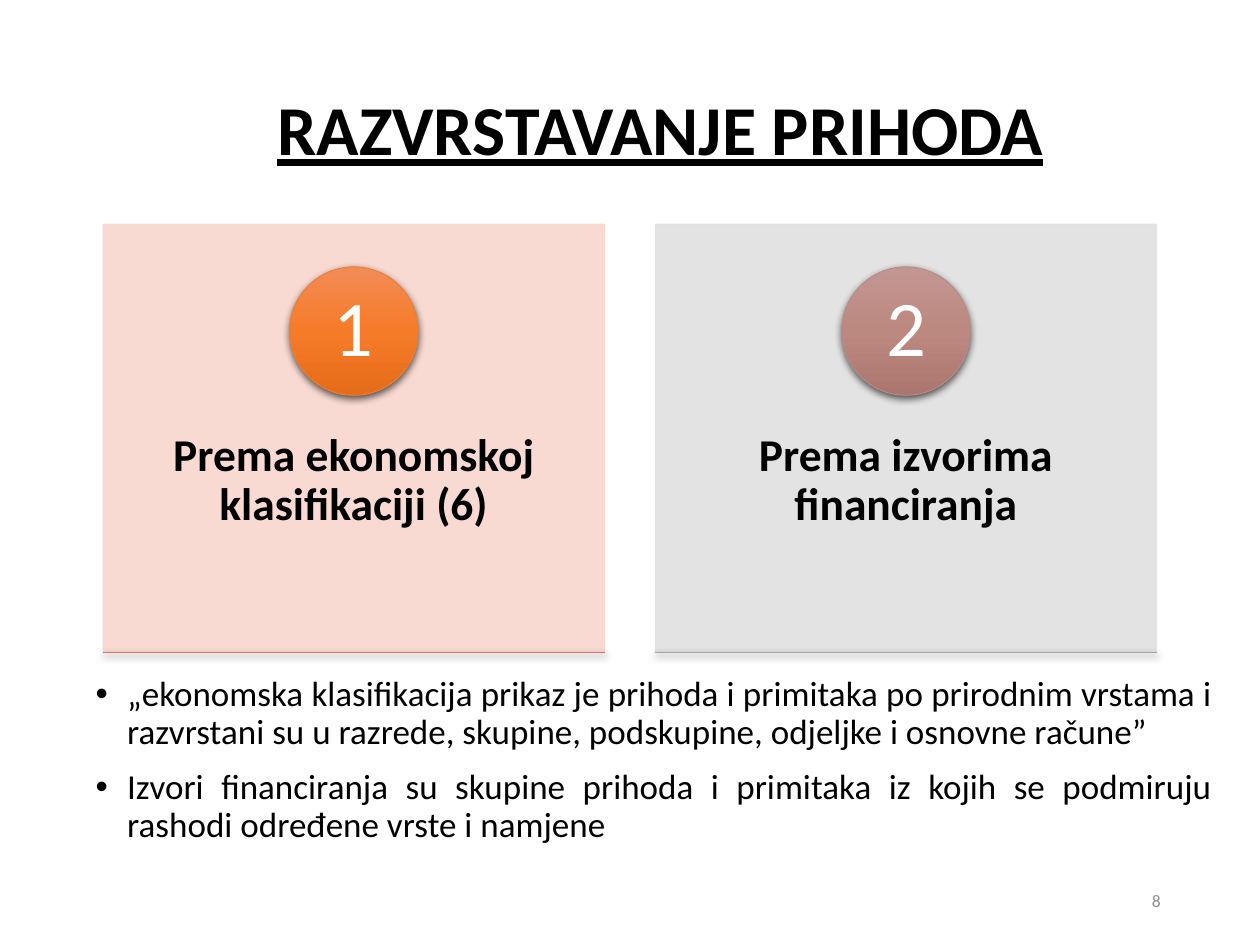
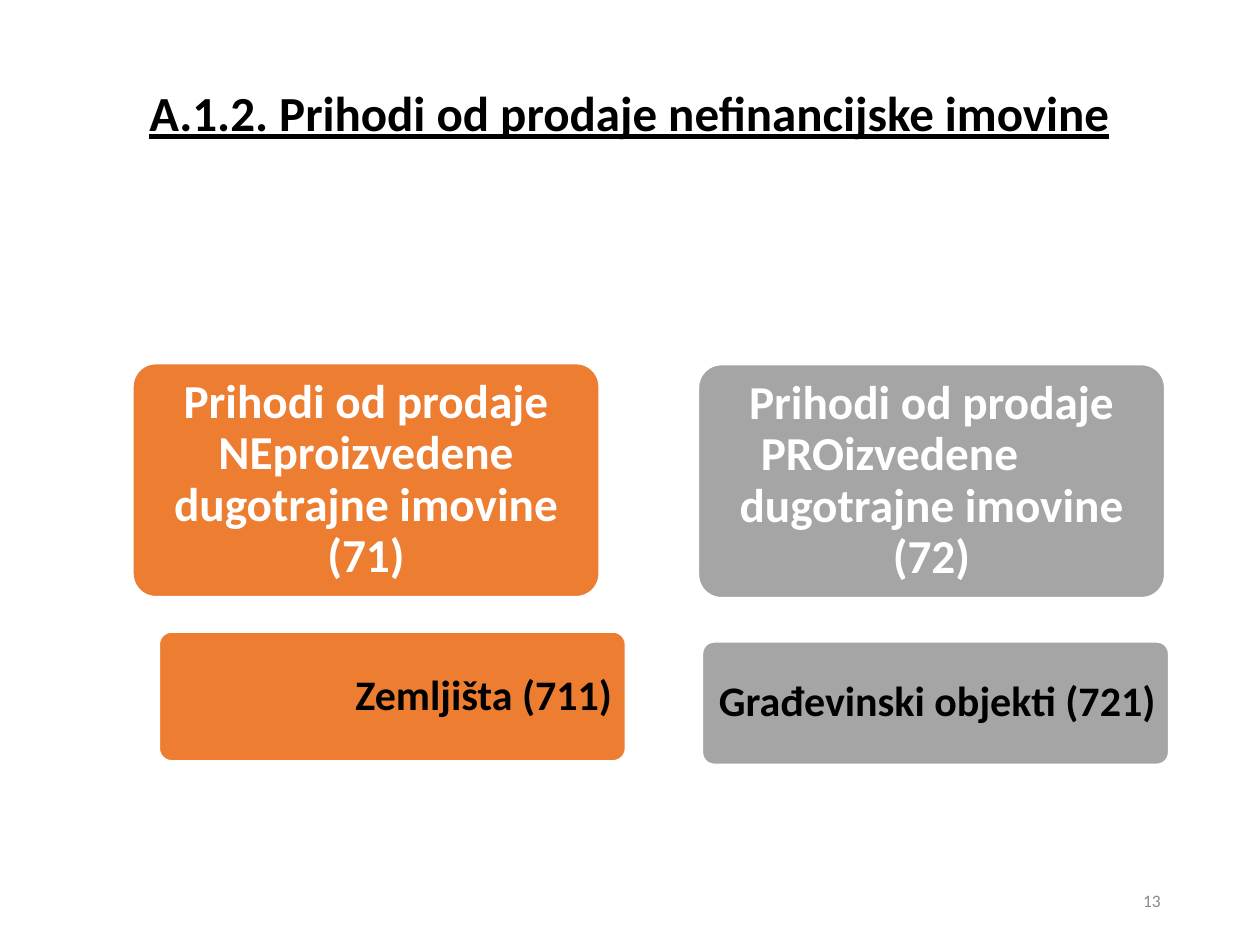
from copy import deepcopy

from lxml.etree import SubElement
from pptx import Presentation
from pptx.dml.color import RGBColor
from pptx.enum.shapes import MSO_CONNECTOR, MSO_SHAPE
from pptx.enum.text import MSO_ANCHOR, PP_ALIGN
from pptx.oxml.ns import qn
from pptx.util import Cm, Pt

COLORS = {
    "black": "000000", "white": "FFFFFF", "number": "8C8C8C",
    "orange": "ED7D31", "gray": "A5A5A5", "peach": "F8D7CE", "silver": "E1E1E1",
    "rust line": "D17B5C", "rose line": "B98A82",
}
COLORS = {name: RGBColor.from_string(value) for name, value in COLORS.items()}
TITLE = {"bold": True, "underline": True}


def write(shape, lines, size, color="black", font=None, paragraph=None, frame=None):
    """Fill a shape with one paragraph per line; the dicts hold format values."""
    text_frame = shape.text_frame
    text_frame.word_wrap = True
    for name, value in (frame or {}).items():
        setattr(text_frame, name, value)
    text_frame.text = "\n".join(lines)
    paragraph_format = {"alignment": PP_ALIGN.CENTER, "line_spacing": 0.9, **(paragraph or {})}
    font_format = {"name": "Calibri", "size": Pt(size), **(font or {})}
    for item in text_frame.paragraphs:
        for name, value in paragraph_format.items():
            setattr(item, name, value)
        for name, value in font_format.items():
            setattr(item.runs[0].font, name, value)
        item.runs[0].font.color.rgb = COLORS[color]


def add_shadow(shape):
    properties = shape._element.spPr
    for effects in properties.findall(qn("a:effectLst")):
        properties.remove(effects)
    effects = SubElement(properties, qn("a:effectLst"))
    shadow = SubElement(effects, qn("a:outerShdw"), blurRad=str(Pt(4.5)),
                        dist=str(Pt(1.5)), dir="5400000", algn="ctr", rotWithShape="0")
    shadow_color = SubElement(shadow, qn("a:srgbClr"), val=str(COLORS["black"]))
    SubElement(shadow_color, qn("a:alpha"), val="63000")


presentation = Presentation()
presentation.slide_width, presentation.slide_height = Cm(25.4), Cm(19.05)
blank = presentation.slide_layouts[6]

# Titles and slide numbers
slides = []
for title, size, left, height, anchor, number in (
    ("RAZVRSTAVANJE PRIHODA", 40, 2.43, 2.01, MSO_ANCHOR.MIDDLE, "8"),
    ("A.1.2. Prihodi od prodaje nefinancijske imovine", 28, 1.8, 2.44, MSO_ANCHOR.TOP, "13"),
):
    slide = presentation.slides.add_slide(blank)
    slides.append(slide)
    title_box = slide.shapes.add_textbox(Cm(left), Cm(1.68), Cm(21.77), Cm(height))
    write(title_box, [title], size, font=TITLE, frame={"vertical_anchor": anchor})
    number_box = slide.shapes.add_textbox(Cm(17.93), Cm(17.65), Cm(5.72), Cm(1.02))
    write(number_box, [number], 10, "number",
          paragraph={"alignment": PP_ALIGN.RIGHT, "line_spacing": 1.0},
          frame={"vertical_anchor": MSO_ANCHOR.MIDDLE})
income_slide, sales_slide = slides

# Two numbered cards
CARD_TOP, CARD_WIDTH, CARD_HEIGHT, CARD_STEP, CIRCLE = 4.52, 10.11, 8.64, 11.13, 2.59
cards = (
    ("Prema ekonomskoj klasifikaciji (6)", "peach", "orange", "rust line",
     ("F18C57", "F67B28", "E56C19")),
    ("Prema izvorima financiranja", "silver", "rose line", "gray",
     ("C19791", "BC8880", "AA766E")),
)
for index, (label, card_color, circle_line, base_color, gradient) in enumerate(cards):
    left = 2.08 + index * CARD_STEP
    card = income_slide.shapes.add_shape(
        MSO_SHAPE.RECTANGLE, Cm(left), Cm(CARD_TOP), Cm(CARD_WIDTH), Cm(CARD_HEIGHT))
    card.shadow.inherit = False
    card.fill.solid()
    card.fill.fore_color.rgb = COLORS[card_color]
    card.line.color.rgb = COLORS[card_color]
    card.line.width = Pt(0.5)
    for color_element in card._element.spPr.iter(qn("a:srgbClr")):
        SubElement(color_element, qn("a:alpha"), val="90000")
    write(card, [label], 26, font={"bold": True},
          frame={"vertical_anchor": MSO_ANCHOR.TOP, "margin_top": Cm(4.19),
                 "margin_left": Cm(0.79), "margin_right": Cm(0.79)})

    circle = income_slide.shapes.add_shape(
        MSO_SHAPE.OVAL, Cm(left + (CARD_WIDTH - CIRCLE) / 2), Cm(5.38), Cm(CIRCLE), Cm(CIRCLE))
    circle.fill.gradient()
    circle.fill.gradient_angle = 270
    stop_list = circle._element.spPr.find(qn("a:gradFill")).find(qn("a:gsLst"))
    stop_list.insert(1, deepcopy(stop_list[0]))
    for stop, position, value in zip(circle.fill.gradient_stops, (0, 0.5, 1), gradient):
        stop.position = position
        stop.color.rgb = RGBColor.from_string(value)
    circle.line.color.rgb = COLORS[circle_line]
    circle.line.width = Pt(0.5)
    add_shadow(circle)
    write(circle, [str(index + 1)], 45, "white",
          frame={"vertical_anchor": MSO_ANCHOR.MIDDLE, "margin_left": Cm(0.2),
                 "margin_right": Cm(0.2), "margin_top": Cm(0.03), "margin_bottom": Cm(0.03)})

    base_y = Cm(CARD_TOP + CARD_HEIGHT)
    base = income_slide.shapes.add_connector(
        MSO_CONNECTOR.STRAIGHT, Cm(left), base_y, Cm(left + CARD_WIDTH), base_y)
    base.line.color.rgb = COLORS[base_color]
    base.line.width = Pt(0.5)
    add_shadow(base)

# Definitions under the cards
definitions = income_slide.shapes.add_textbox(Cm(1.68), Cm(13.51), Cm(23.01), Cm(3.2))
write(definitions, [
    "„ekonomska klasifikacija prikaz je prihoda i primitaka po prirodnim vrstama i "
    "razvrstani su u razrede, skupine, podskupine, odjeljke i osnovne račune”",
    "Izvori financiranja su skupine prihoda i primitaka iz kojih se podmiruju "
    "rashodi određene vrste i namjene",
], 20, paragraph={"alignment": PP_ALIGN.JUSTIFY, "space_before": Pt(10)})
for paragraph in definitions.text_frame.paragraphs:
    properties = paragraph._p.get_or_add_pPr()
    properties.set("marL", str(Pt(18)))
    properties.set("indent", str(-Pt(18)))
    SubElement(properties, qn("a:buFont"), typeface="Arial")
    SubElement(properties, qn("a:buChar"), char="•")

# Sale income groups with their subgroups
BOX_WIDTH = 9.42
group_style = {"size": 27, "color": "white", "align": PP_ALIGN.CENTER, "margin": 0.29}
subgroup_style = {"size": 24, "color": "black", "align": PP_ALIGN.RIGHT, "margin": 0.2}
boxes = (
    (["Prihodi od prodaje NEproizvedene dugotrajne imovine (71)"],
     2.67, 7.32, 4.72, "orange", group_style),
    (["Prihodi od prodaje", "PROizvedene", "dugotrajne imovine (72)"],
     14.07, 7.34, 4.72, "gray", group_style),
    (["Zemljišta (711)"], 3.2, 12.73, 2.62, "orange", subgroup_style),
    (["Građevinski objekti (721)"], 14.15, 12.93, 2.49, "gray", subgroup_style),
)
for lines, left, top, height, fill_color, style in boxes:
    box = sales_slide.shapes.add_shape(
        MSO_SHAPE.ROUNDED_RECTANGLE, Cm(left), Cm(top), Cm(BOX_WIDTH), Cm(height))
    box.adjustments[0] = 0.1
    box.shadow.inherit = False
    box.fill.solid()
    box.fill.fore_color.rgb = COLORS[fill_color]
    box.line.color.rgb = COLORS["white"]
    box.line.width = Pt(1.5)
    margins = {f"margin_{side}": Cm(style["margin"]) for side in ("left", "right", "top", "bottom")}
    write(box, lines, style["size"], style["color"], font={"bold": True},
          paragraph={"alignment": style["align"]},
          frame={"vertical_anchor": MSO_ANCHOR.MIDDLE, **margins})
    if len(lines) > 1:
        middle_line = box.text_frame.paragraphs[1]
        middle_line.alignment = PP_ALIGN.LEFT
        middle_line._p.get_or_add_pPr().set("marL", str(Cm(0.84)))

presentation.save("out.pptx")
